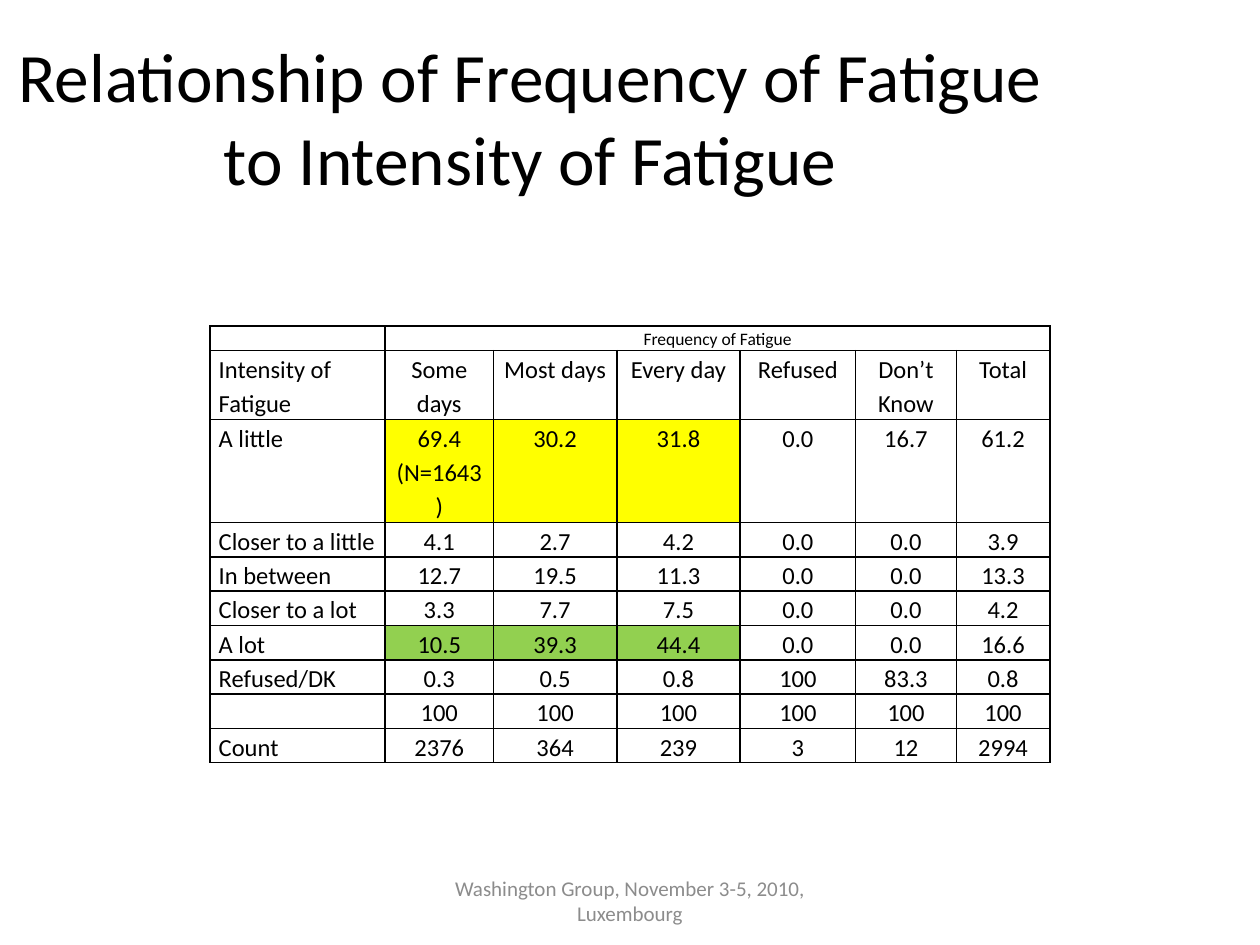
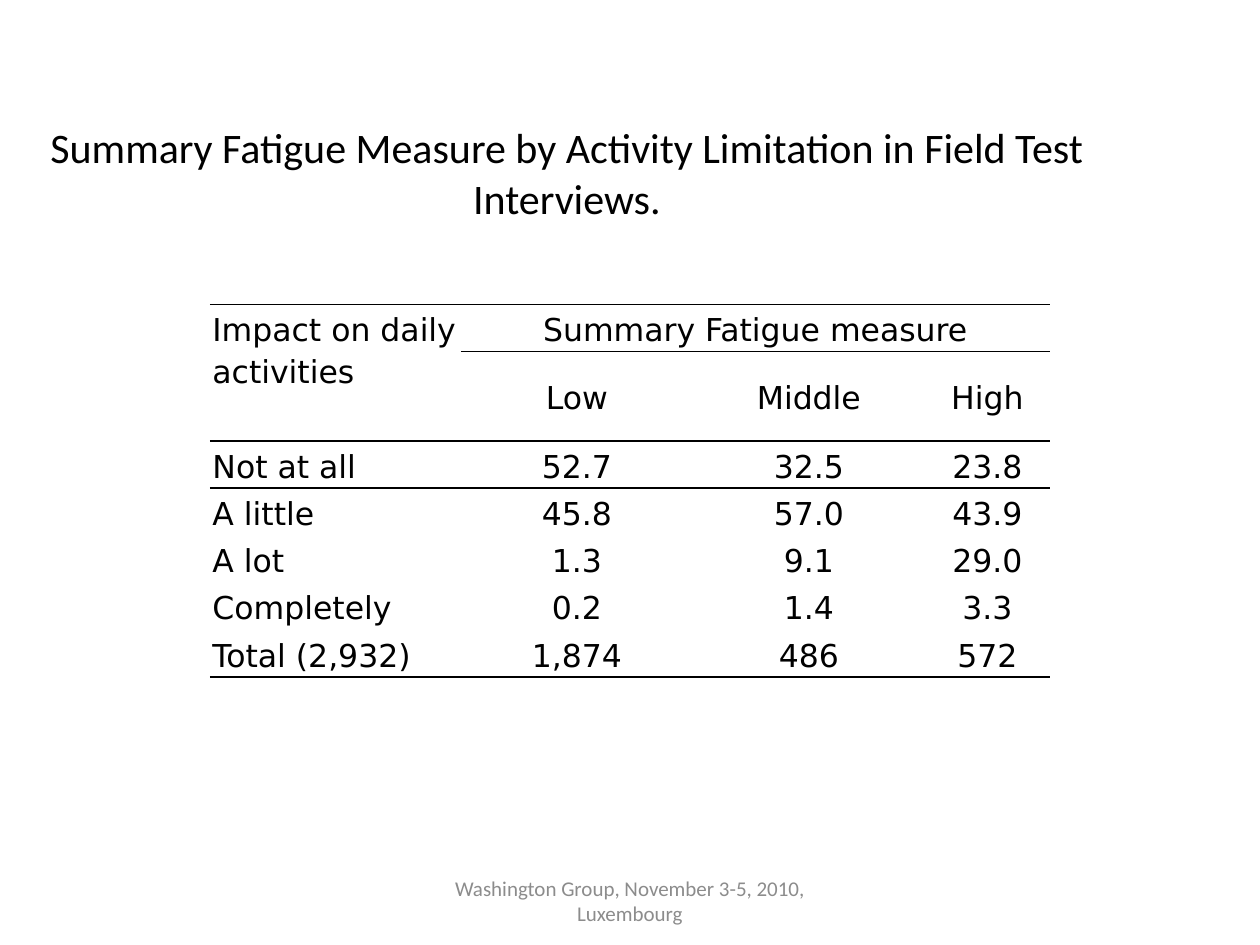
"""Build two slides that show fatigue survey results in tables."""
from lxml import etree
from pptx import Presentation
from pptx import util as u
from pptx.dml.color import RGBColor
from pptx.enum import text
from pptx.oxml import ns

HUES = {"ink": "000000", "foot": "8C8C8C", "page": "FFFFFF",
        "low": "FFFF00", "high": "92D050"}
FACE = "Calibri"
PLAIN = "{2D5ABB26-0587-4C30-8999-92F81FD0307C}"
MID, TOP = text.MSO_ANCHOR.MIDDLE, text.MSO_ANCHOR.TOP
LEFT, MIDST = text.PP_ALIGN.LEFT, text.PP_ALIGN.CENTER
FOOT = "Washington Group, November 3-5, 2010, Luxembourg"

CROSS = [
    ["", "Frequency of Fatigue", "", "", "", "", ""],
    ["Intensity of Fatigue", "Some days", "Most days", "Every day",
     "Refused", "Don’t Know", "Total"],
    ["A little", "69.4\n(N=1643)", "30.2", "31.8", "0.0", "16.7", "61.2"],
    ["Closer to a little", "4.1", "2.7", "4.2", "0.0", "0.0", "3.9"],
    ["In between", "12.7", "19.5", "11.3", "0.0", "0.0", "13.3"],
    ["Closer to a lot", "3.3", "7.7", "7.5", "0.0", "0.0", "4.2"],
    ["A lot", "10.5", "39.3", "44.4", "0.0", "0.0", "16.6"],
    ["Refused/DK", "0.3", "0.5", "0.8", "100", "83.3", "0.8"],
    ["", "100", "100", "100", "100", "100", "100"],
    ["Count", "2376", "364", "239", "3", "12", "2994"],
]
IMPACT = [
    ["Impact on daily activities", "Summary Fatigue measure", "", ""],
    ["", "Low", "Middle", "High"],
    ["Not at all", "52.7", "32.5", "23.8"],
    ["A little", "45.8", "57.0", "43.9"],
    ["A lot", "1.3", "9.1", "29.0"],
    ["Completely", "0.2", "1.4", "3.3"],
    ["Total (2,932)", "1,874", "486", "572"],
]


def style(para, size, hue="ink", face=FACE, align=MIDST):
    """Set the font and alignment of a paragraph."""
    para.alignment = align
    font = para.font
    font.size, font.name = u.Pt(size), face
    font.color.rgb = RGBColor.from_string(HUES[hue])


def label(slide, words, box, size, hue="ink", below=3.6):
    """Add a centred text box."""
    frame = slide.shapes.add_textbox(*map(u.Pt, box)).text_frame
    frame.word_wrap = True
    frame.auto_size = text.MSO_AUTO_SIZE.NONE
    frame.vertical_anchor = MID
    frame.margin_bottom = u.Pt(below)
    frame.text = words
    style(frame.paragraphs[0], size, hue)


def page(deck, title, box, size, below=3.6):
    """Add a slide with its footer and title."""
    slide = deck.slides.add_slide(deck.slide_layouts[6])
    label(slide, FOOT, (246, 500.5, 228, 28.75), 12, "foot")
    label(slide, title, box, size, below=below)
    return slide


def edge(cell, sides):
    """Draw black lines on the named sides of a cell."""
    props = cell._tc.get_or_add_tcPr()
    for side in sides:
        line = etree.SubElement(props, ns.qn(f"a:ln{side}"), w=str(u.Pt(1)))
        fill = etree.SubElement(line, ns.qn("a:solidFill"))
        etree.SubElement(fill, ns.qn("a:srgbClr"), val=HUES["ink"])


def fill_in(cell, words, size, face, align, pad, anchor):
    """Write styled text into a cell."""
    cell.margin_left = cell.margin_right = u.Pt(pad[0])
    cell.margin_top = cell.margin_bottom = u.Pt(pad[1])
    cell.vertical_anchor = anchor
    cell.text = words
    for para in cell.text_frame.paragraphs:
        para.line_spacing = 1.15
        style(para, size, face=face, align=align)
        if not words:
            etree.SubElement(para._p, ns.qn("a:endParaRPr"),
                             sz=str(size * 100))


def tint(cell, hue):
    """Fill a cell, or leave it clear."""
    if hue:
        cell.fill.solid()
        cell.fill.fore_color.rgb = RGBColor.from_string(HUES[hue])
    else:
        cell.fill.background()


def grid(slide, top, wide, high, data, look):
    """Add a table; look(row, col) gives size, face, pad, anchor, sides, hue."""
    frame = slide.shapes.add_table(len(high), len(wide), u.Pt(120), u.Pt(top),
                                   u.Pt(sum(wide)), u.Pt(sum(high)))
    table = frame.table
    table.first_row = table.horz_banding = False
    table._tbl.tblPr.find(ns.qn("a:tableStyleId")).text = PLAIN
    for col, width in zip(table.columns, wide):
        col.width = u.Pt(width)
    for r, (row, height) in enumerate(zip(data, high)):
        table.rows[r].height = u.Pt(height)
        for c, words in enumerate(row):
            size, face, pad, anchor, sides, hue = look(r, c)
            cell = table.cell(r, c)
            fill_in(cell, words, size, face, MIDST if c else LEFT, pad, anchor)
            edge(cell, sides)
            tint(cell, hue)
    table.cell(0, 1).merge(table.cell(0, len(wide) - 1))
    return table


def cross_look(r, c):
    """Style the fully ruled table with its two marked rows."""
    hue = {2: "low", 6: "high"}.get(r) if 1 <= c <= 3 else None
    return 14 if r else 10, FACE, (5, 0), TOP, "LRTB", hue


def impact_look(r, c):
    """Style the table that is ruled around its head and foot."""
    sides = {0: "TB", 1: "B", 2: "T", 6: "B"}.get(r, "")
    anchor = MID if r or c else TOP
    return 18, "DejaVu Sans", (1.44, 1.44), anchor, sides, "page"


def main():
    """Build and save the deck."""
    deck = Presentation()
    deck.slide_width, deck.slide_height = u.Pt(720), u.Pt(540)

    slide = page(deck, "Relationship of Frequency of Fatigue "
                 "to Intensity of Fatigue", (0, 21.6, 606, 90), 39.6)
    grid(slide, 186.4, [100.1, 61.9, 70.5, 70.5, 66, 57.5, 53.5],
         [14, 39.3, 58.9] + [19.6] * 7, CROSS, cross_look)

    slide = page(deck, "Summary Fatigue Measure by Activity Limitation "
                 "in Field Test Interviews.", (0, 77.75, 648, 90), 24, 52.2)
    table = grid(slide, 174, [143.4, 132.6, 132.6, 71.4],
                 [27, 51] + [27] * 5, IMPACT, impact_look)
    table.cell(0, 0).merge(table.cell(1, 0))

    deck.save("out.pptx")


if __name__ == "__main__":
    main()
